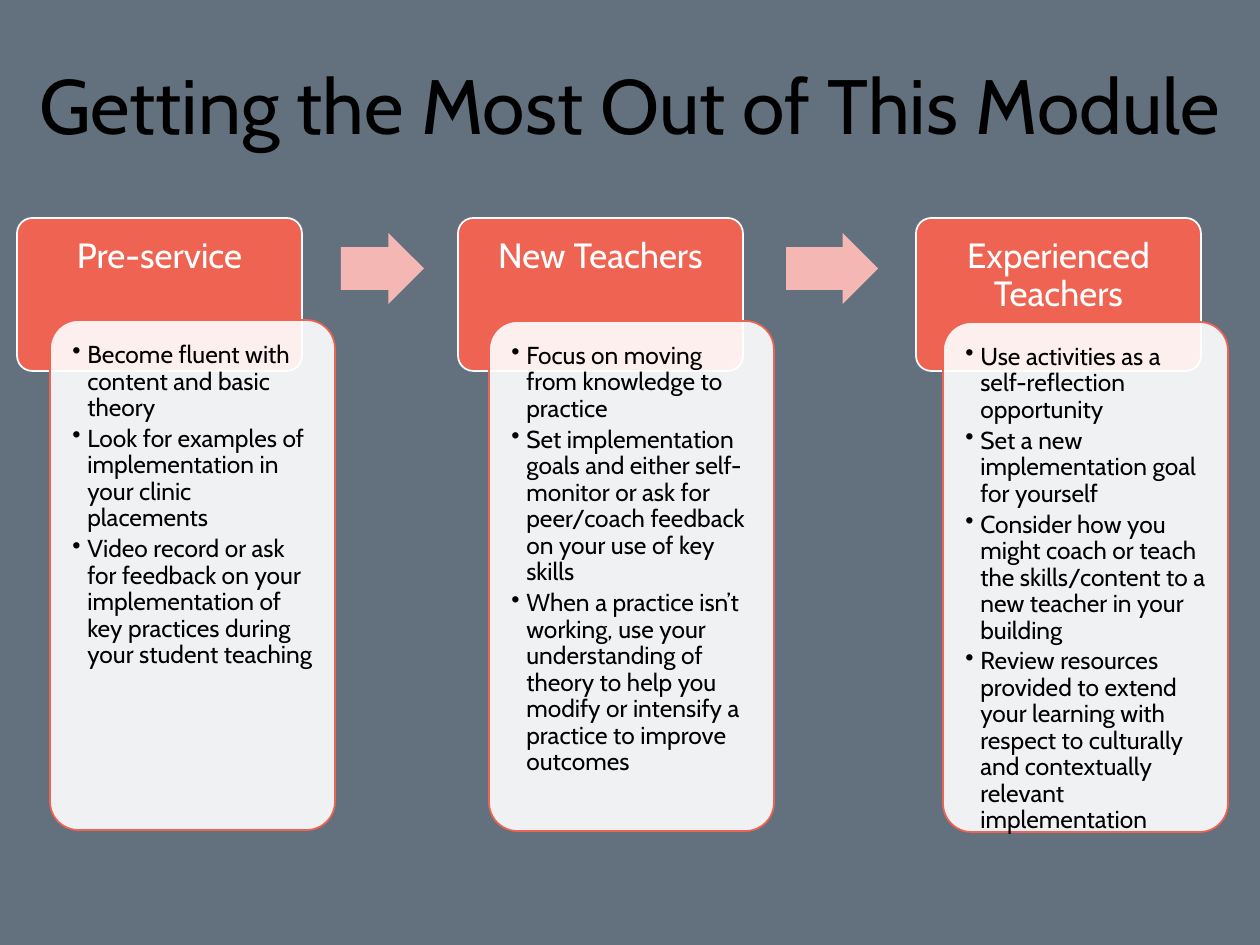
from lxml import etree
from pptx import Presentation
from pptx import util as u
from pptx.dml.color import RGBColor
from pptx.enum import shapes, text
from pptx.oxml.ns import qn

PX = 914400 / 126  # EMU in one px


def px(*lengths):
    return [u.Emu(round(n * PX)) for n in lengths]


def rgb(hex_code):
    return RGBColor.from_string(hex_code)


CORAL, PINK, WHITE, BLACK, SLATE = "EE6352", "F5B7B3", "FFFFFF", "000000", "63717F"

# Each column: header left, body left, body top, heading, bullets
columns = [
    (17, 50, 320, "Pre-service", [
        "Become fluent with content and basic theory",
        "Look for examples of implementation in your clinic placements",
        "Video record or ask for feedback on your implementation of key "
        "practices during your student teaching"]),
    (458, 489, 321, "New Teachers", [
        "Focus on moving from knowledge to practice",
        "Set implementation goals and either self-monitor or ask for "
        "peer/coach feedback on your use of key skills",
        "When a practice isn’t working, use your understanding of theory to "
        "help you modify or intensify a practice to improve outcomes"]),
    (916, 943, 322, "Experienced Teachers", [
        "Use activities as a self-reflection opportunity",
        "Set a new implementation goal for yourself",
        "Consider how you might coach or teach the skills/content to a new "
        "teacher in your building",
        "Review resources provided to extend your learning with respect to "
        "culturally and contextually relevant implementation"]),
]
arrows = [(341, 83), (786, 92)]  # left, width

# Slide and background
prs = Presentation()
prs.slide_width, prs.slide_height = px(1260, 945)
s = prs.slides.add_slide(prs.slide_layouts[5])
s.background.fill.solid()
s.background.fill.fore_color.rgb = rgb(SLATE)

# Title
title = s.shapes.title
title.left, title.top, title.width, title.height = px(0, 33, 1260, 154)
tf = title.text_frame
tf.text = "Getting the Most Out of This Module"
tf.auto_size = text.MSO_AUTO_SIZE.NONE
tf.vertical_anchor = text.MSO_ANCHOR.MIDDLE
p = tf.paragraphs[0]
p.alignment, p.line_spacing = text.PP_ALIGN.CENTER, 0.9
for name, value in {"name": "Cabin", "size": u.Pt(44)}.items():
    setattr(p.runs[0].font, name, value)
p.runs[0].font.color.rgb = rgb(BLACK)

# Columns: a header card with a translucent body card over its lower edge
for head_left, body_left, body_top, heading, bullets in columns:
    cards = [
        dict(box=(head_left, 218, 285, 153), fill=CORAL, line=WHITE, color=WHITE,
             size=20, inset=16, after=0, align=text.PP_ALIGN.CENTER, lines=[heading]),
        dict(box=(body_left, body_top, 285, 510), fill=WHITE, line=CORAL, color=BLACK,
             size=14, inset=14, after=2.5, align=text.PP_ALIGN.LEFT, lines=bullets),
    ]
    for card in cards:
        sp = s.shapes.add_shape(shapes.MSO_SHAPE.ROUNDED_RECTANGLE, *px(*card["box"]))
        sp.adjustments[0] = 0.1
        sp.shadow.inherit = False
        sp.fill.solid()
        sp.fill.fore_color.rgb = rgb(card["fill"])
        sp.line.color.rgb = rgb(card["line"])
        sp.line.width = u.Pt(1)
        tf = sp.text_frame
        tf.word_wrap = True
        tf.vertical_anchor = text.MSO_ANCHOR.TOP
        for side in ("left", "top", "right", "bottom"):
            setattr(tf, f"margin_{side}", px(card["inset"])[0])

        for i, line in enumerate(card["lines"]):
            p = tf.paragraphs[0] if i == 0 else tf.add_paragraph()
            formats = {"alignment": card["align"], "line_spacing": 0.9,
                       "space_after": u.Pt(card["after"])}
            for name, value in formats.items():
                setattr(p, name, value)
            if card["lines"] is bullets:
                pPr = p._p.get_or_add_pPr()
                indent = px(15)[0]
                pPr.set("marL", str(indent))
                pPr.set("indent", str(-indent))
                etree.SubElement(pPr, qn("a:buChar")).set("char", "•")
            r = p.add_run()
            r.text = line
            for name, value in {"name": "Cabin", "size": u.Pt(card["size"])}.items():
                setattr(r.font, name, value)
            r.font.color.rgb = rgb(card["color"])

    # The body card lets the header show through
    clr = sp.fill._xPr.find(qn("a:solidFill"))[0]
    etree.SubElement(clr, qn("a:alpha")).set("val", "90000")

# Arrows between the headers
for left, width in arrows:
    sp = s.shapes.add_shape(shapes.MSO_SHAPE.RIGHT_ARROW, *px(left, 233, width, 71))
    sp.adjustments[0], sp.adjustments[1] = 0.6, 0.5
    sp.shadow.inherit = False
    sp.fill.solid()
    sp.fill.fore_color.rgb = rgb(PINK)
    sp.line.fill.background()

prs.save("out.pptx")
